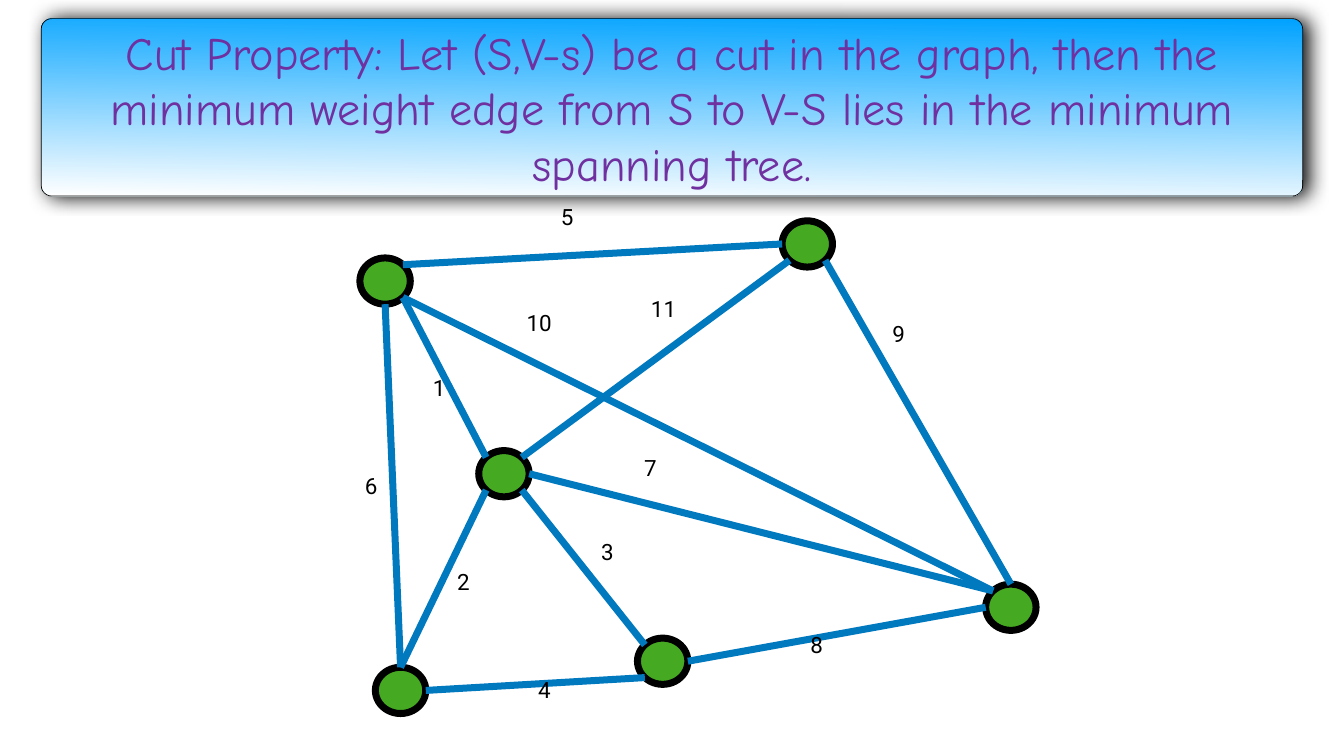
import math
import pptx
import pptx.util
import pptx.dml.color
import pptx.enum.shapes
import pptx.enum.text
import pptx.oxml
import pptx.oxml.ns

Cm, Pt = pptx.util.Cm, pptx.util.Pt
SHAPE = pptx.enum.shapes.MSO_SHAPE
MIDDLE = pptx.enum.text.MSO_ANCHOR.MIDDLE


def rgb(value):
    return pptx.dml.color.RGBColor.from_string(value)


def add_text(sp, text, font, size, color):
    """Write one run into a shape and return its paragraph."""
    tf = sp.text_frame
    tf.word_wrap = True
    tf.vertical_anchor = MIDDLE
    tf.margin_left = tf.margin_right = tf.margin_top = tf.margin_bottom = Cm(0.15)
    p = tf.paragraphs[0]
    r = p.add_run()
    r.text = text
    r.font.name = font
    r.font.size = Pt(size)
    r.font.color.rgb = rgb(color)
    return p


prs = pptx.Presentation()
prs.slide_width, prs.slide_height = Cm(67.74), Cm(38.1)
s = prs.slides.add_slide(prs.slide_layouts[6])

# Title banner with gradient and soft shadow
sp = s.shapes.add_shape(SHAPE.ROUNDED_RECTANGLE, Cm(2.08), Cm(0.94), Cm(63.58), Cm(8.94))
sp.adjustments[0] = 0.059
sp.fill.gradient()
sp.fill.gradient_angle = 269
for stop, color in zip(sp.fill.gradient_stops, ("00A2FF", "FFFFFF")):
    stop.color.rgb = rgb(color)
sp.line.color.rgb = rgb("000000")
sp.line.width = Pt(1)
sp.shadow.inherit = False
effects = sp._element.spPr.find(pptx.oxml.ns.qn("a:effectLst"))
effects.append(pptx.oxml.parse_xml(
    f'<a:outerShdw {pptx.oxml.ns.nsdecls("a")} blurRad="{Pt(28)}" dist="{Pt(9)}" dir="0" '
    'rotWithShape="0"><a:srgbClr val="000000"><a:alpha val="97000"/></a:srgbClr></a:outerShdw>'))
p = add_text(sp, "Cut Property: Let (S,V-s) be a cut in the graph, then the minimum weight "
             "edge from S to V-S lies in the minimum spanning tree.", "Comic Neue", 66, "7030A0")
p.alignment = pptx.enum.text.PP_ALIGN.CENTER

# Graph nodes: left and top in cm
NODE_W, NODE_H = 2.54, 2.33
nodes = {
    "A": (18.14, 13.0), "B": (39.42, 11.13), "C": (24.13, 22.71),
    "D": (18.92, 33.63), "E": (32.13, 32.16), "F": (49.68, 29.44),
}
for x, y in nodes.values():
    sp = s.shapes.add_shape(SHAPE.OVAL, Cm(x), Cm(y), Cm(NODE_W), Cm(NODE_H))
    sp.fill.solid()
    sp.fill.fore_color.rgb = rgb("45AA21")
    sp.line.color.rgb = rgb("000000")
    sp.line.width = Pt(10)
    sp.shadow.inherit = False

# Edges run between compass points on the node outlines
compass = {name: math.radians(45 * i)
           for i, name in enumerate(("E", "SE", "S", "SW", "W", "NW", "N", "NE"))}
edges = [
    ("B", "SE", "F", "N"), ("F", "NW", "A", "SE"), ("B", "SW", "C", "NE"),
    ("D", "N", "C", "SW"), ("E", "NW", "C", "SE"), ("F", "W", "E", "E"),
    ("C", "NW", "A", "SE"), ("B", "W", "A", "NE"), ("D", "N", "A", "S"),
    ("D", "E", "E", "SW"), ("F", "NW", "C", "E"),
]
for start, start_side, end, end_side in edges:
    ends = []
    for node, side in ((start, start_side), (end, end_side)):
        x, y = nodes[node]
        ends += [Cm(x + NODE_W / 2 * (1 + math.cos(compass[side]))),
                 Cm(y + NODE_H / 2 * (1 + math.sin(compass[side])))]
    line = s.shapes.add_connector(pptx.enum.shapes.MSO_CONNECTOR.STRAIGHT, *ends)
    line.line.color.rgb = rgb("0079BF")
    line.line.width = Pt(10)
    line._element.spPr.append(pptx.oxml.parse_xml(
        f'<a:effectLst {pptx.oxml.ns.nsdecls("a")}/>'))

# Edge weights: left and top in cm
weights = [
    ("5", 28.12, 9.42), ("6", 18.24, 23.01), ("10", 26.39, 14.76), ("9", 44.83, 15.32),
    ("1", 21.67, 18.08), ("4", 26.97, 33.3), ("3", 30.15, 26.34), ("2", 22.89, 27.81),
    ("7", 32.31, 22.1), ("8", 40.69, 31.01), ("11", 32.66, 14.07),
]
for text, x, y in weights:
    width = 1.37 if len(text) == 1 else 1.78
    sp = s.shapes.add_textbox(Cm(x), Cm(y), Cm(width), Cm(3.12))
    p = add_text(sp, text, "Roboto", 32, "000000")
    p.line_spacing = 0.9
    p.space_before = Pt(45)
    sp.text_frame.auto_size = pptx.enum.text.MSO_AUTO_SIZE.SHAPE_TO_FIT_TEXT

prs.save("out.pptx")
